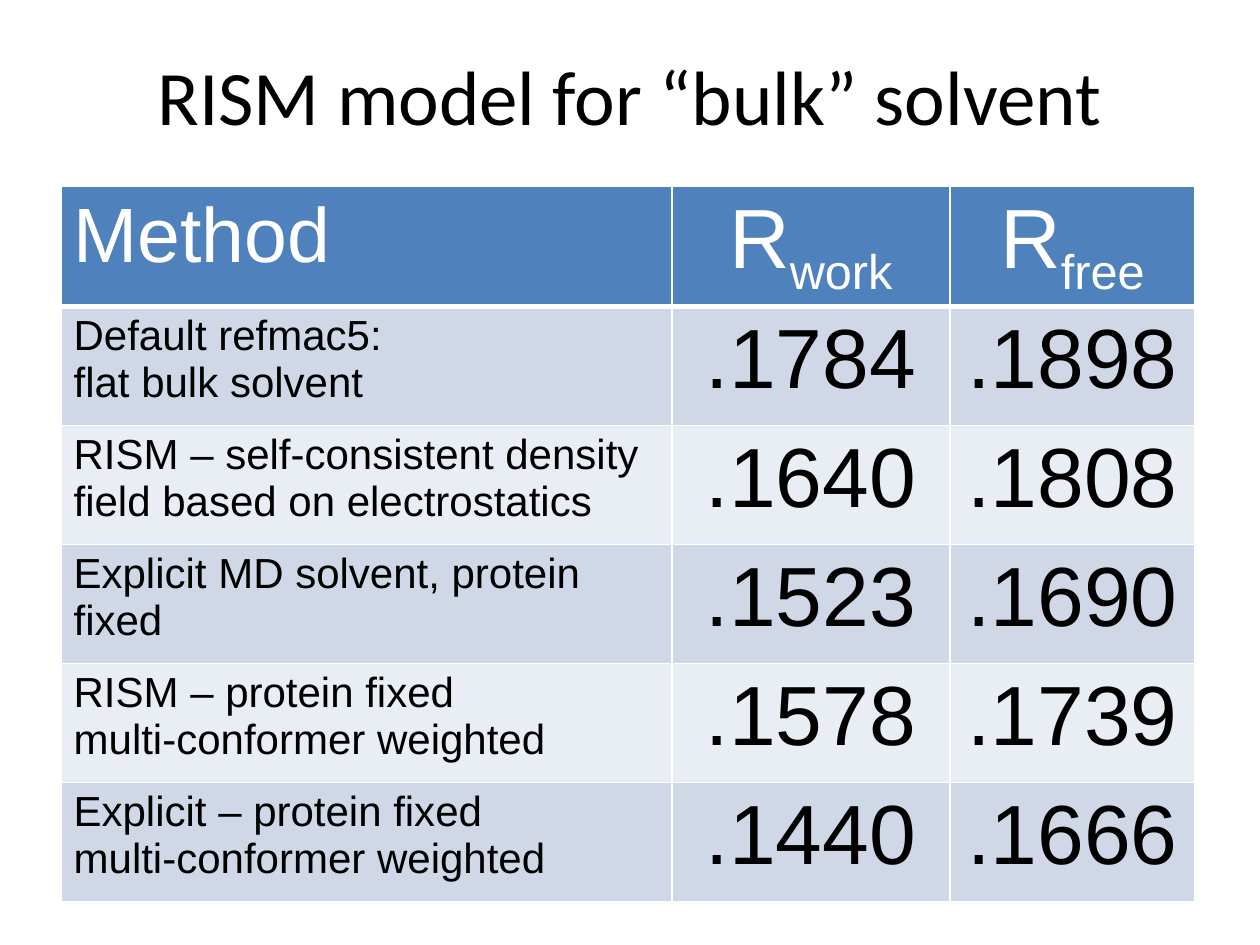
from lxml import etree
from pptx import Presentation
from pptx.dml.color import RGBColor
from pptx.enum.text import MSO_ANCHOR, PP_ALIGN
from pptx.oxml.ns import qn
from pptx.util import Pt

CENTER, LEFT = PP_ALIGN.CENTER, PP_ALIGN.LEFT
MIDDLE = MSO_ANCHOR.MIDDLE
COLORS = {"text": "000000", "white": "FFFFFF", "header": "4F81BD",
          "odd": "D0D8E8", "even": "E9EDF4"}
ROWS = [
    ("Default refmac5:\nflat bulk solvent", ".1784", ".1898"),
    ("RISM – self-consistent density field based on electrostatics", ".1640", ".1808"),
    ("Explicit MD solvent, protein fixed", ".1523", ".1690"),
    ("RISM – protein fixed\nmulti-conformer weighted", ".1578", ".1739"),
    ("Explicit – protein fixed\nmulti-conformer weighted", ".1440", ".1666"),
]
HEADER = ["Method", "R", "R"]
SUBSCRIPTS = ["", "work", "free"]


def style_text(tf, font, size, color, align):
    for p in tf.paragraphs:
        p.alignment = align
        for r in p.runs:
            r.font.name = font
            r.font.size = Pt(size)
            r.font.bold = False
            r.font.color.rgb = RGBColor.from_string(COLORS[color])


def style_cell(cell, fill, bottom):
    cell.fill.solid()
    cell.fill.fore_color.rgb = RGBColor.from_string(COLORS[fill])
    tcPr = cell._tc.get_or_add_tcPr()
    for i, side in enumerate(["lnL", "lnR", "lnT", "lnB"]):
        width = bottom if side == "lnB" else 1
        ln = etree.Element(qn("a:" + side), w=str(Pt(width)))
        solid = etree.SubElement(ln, qn("a:solidFill"))
        etree.SubElement(solid, qn("a:srgbClr"), val=COLORS["white"])
        tcPr.insert(i, ln)


prs = Presentation()
prs.slide_width, prs.slide_height = Pt(720), Pt(540)
s = prs.slides.add_slide(prs.slide_layouts[5])

title = s.shapes.title
title.left, title.top, title.width, title.height = Pt(36), Pt(9.36), Pt(648), Pt(90)
tf = title.text_frame
tf.text = "RISM model for “bulk” solvent"
tf.vertical_anchor = MIDDLE
style_text(tf, "Calibri", 44, "text", CENTER)

table = s.shapes.add_table(len(ROWS) + 1, len(HEADER), Pt(34.9), Pt(106.6),
                           Pt(648), Pt(408)).table
for col, width in zip(table.columns, [349, 159, 140]):
    col.width = Pt(width)
for row in table.rows:
    row.height = Pt(68)

for i, values in enumerate([HEADER] + ROWS):
    for j, value in enumerate(values):
        cell = table.cell(i, j)
        tf = cell.text_frame
        tf.text = value
        if i == 0:
            fill, color, size = "header", "white", 48 if j else 44
            if SUBSCRIPTS[j]:
                r = tf.paragraphs[0].add_run()
                r.text = SUBSCRIPTS[j]
                r.font._element.set("baseline", "-25000")
        else:
            fill, color, size = "odd" if i % 2 else "even", "text", 48 if j else 24
        style_text(tf, "Arial", size, color, CENTER if j else LEFT)
        style_cell(cell, fill, 1 if i else 3)

prs.save("out.pptx")
